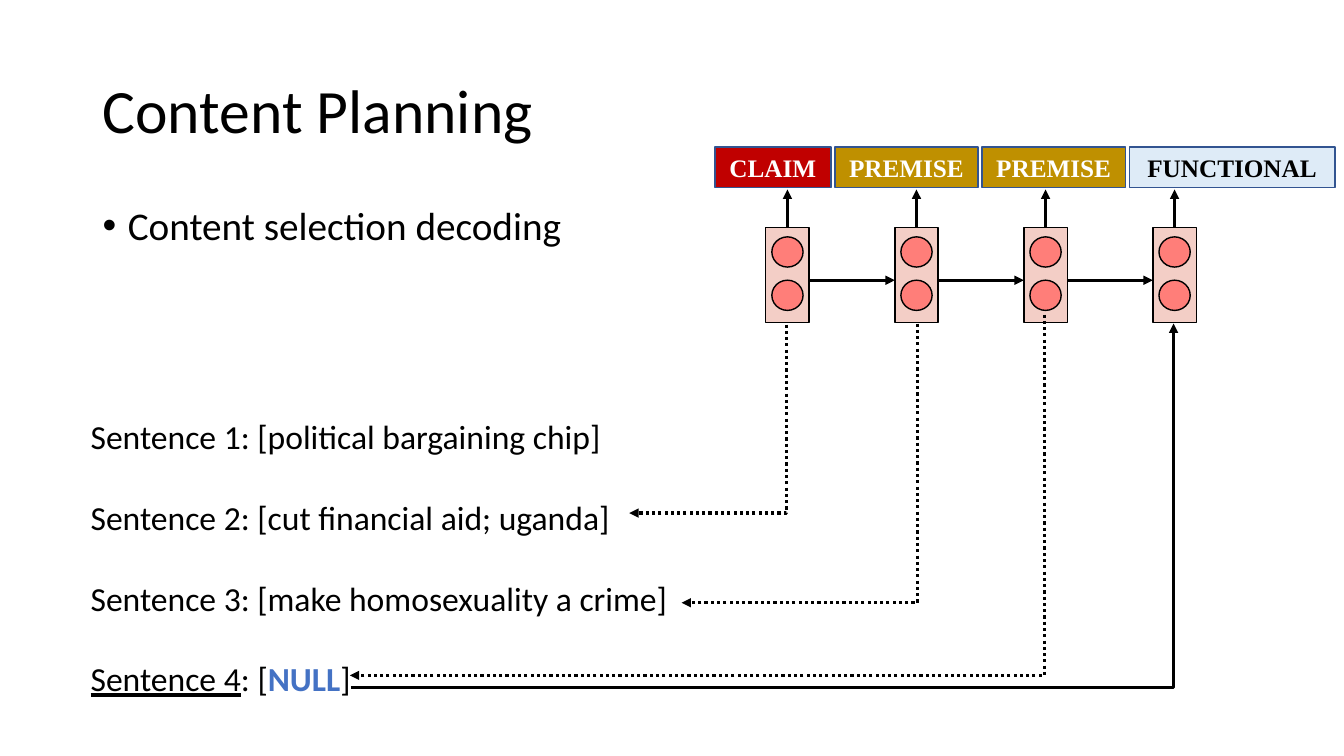
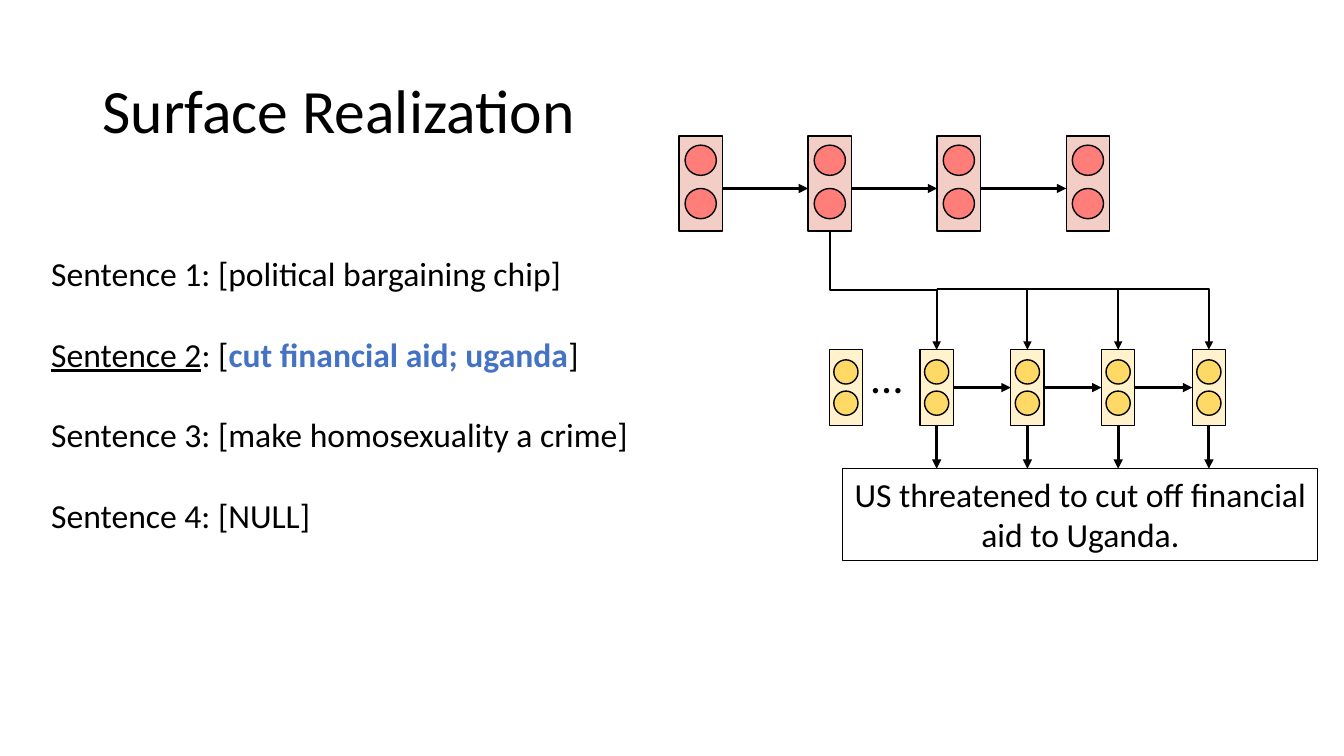
from collections import namedtuple
from itertools import pairwise

from pptx import Presentation
from pptx import util as u
from pptx.dml.color import RGBColor
from pptx.enum import dml, shapes, text
from pptx.oxml import ns, xmlchemy

SANS, SERIF = "Calibri", "Times New Roman"
BLACK, WHITE, BLUE = "000000", "FFFFFF", "4472C4"
TAG_LINE = "325491"
PITCH = 1.28
ARROW_DROP = 0.52
TOP, LEFT, BOTTOM, RIGHT = range(4)

# w, h: cell size; dot_w, dot_h: circle size; dots: circle centres below the top
CellStyle = namedtuple("CellStyle", "w h fill dot_w dot_h dot_fill dots")
PLANNER = CellStyle(0.43, 0.94, "F3CEC6", 0.31, 0.3, "FF7E79", (0.24, 0.67))
WRITER = CellStyle(0.33, 0.75, "FFF2CC", 0.24, 0.24, "FFD966", (0.22, 0.53))

SENTENCES = [
    "political bargaining chip",
    "cut financial aid; uganda",
    "make homosexuality a crime",
    "NULL",
]
TAGS = [
    ("CLAIM", 1.15, "C00000", WHITE),
    ("PREMISE", 1.42, "BF9000", WHITE),
    ("PREMISE", 1.42, "BF9000", WHITE),
    ("FUNCTIONAL", 2.04, "DEEBF7", BLACK),
]


def rgb(color):
    return RGBColor.from_string(color)


def inches(*values):
    return [u.Inches(v) for v in values]


def add_run(p, content, size, color=BLACK, font=SANS, bold=False, underline=False):
    r = p.add_run()
    r.text = content
    f = r.font
    f.size, f.name, f.bold, f.underline = u.Pt(size), font, bold, underline
    f.color.rgb = rgb(color)


def add_text_box(slide, *box):
    sp = slide.shapes.add_textbox(*inches(*box))
    sp.text_frame.word_wrap = True
    return sp


def add_title(slide, content):
    tf = add_text_box(slide, 0.92, 0.4, 11.5, 1.45).text_frame
    tf.vertical_anchor = text.MSO_ANCHOR.MIDDLE
    p = tf.paragraphs[0]
    p.line_spacing = 0.9
    add_run(p, content, 44)


def add_bullet(slide, content):
    p = add_text_box(slide, 0.92, 2, 5.5, 0.7).text_frame.paragraphs[0]
    p.line_spacing, p.space_before = 0.9, u.Pt(10)
    pPr = p._p.get_or_add_pPr()
    pPr.set("marL", str(u.Inches(0.25)))
    pPr.set("indent", str(u.Inches(-0.25)))
    for tag, key, value in (("a:buFont", "typeface", "Arial"), ("a:buChar", "char", "•")):
        bullet = xmlchemy.OxmlElement(tag)
        bullet.set(key, value)
        pPr.append(bullet)
    add_run(p, content, 28)


def add_sentences(slide, left, top, selected):
    """List the sentences, with the label and content of one emphasised."""
    tf = add_text_box(slide, left, top, 6.25, 2.93).text_frame
    for number, content in enumerate(SENTENCES, 1):
        p = tf.paragraphs[0] if number == 1 else tf.add_paragraph()
        if number > 1:
            p.space_before = u.Pt(28.8)
        chosen = number == selected
        add_run(p, f"Sentence {number}", 24, underline=chosen)
        add_run(p, ": [", 24)
        add_run(p, content, 24, BLUE if chosen else BLACK, bold=chosen)
        add_run(p, "]", 24)


def add_shape(slide, kind, box, fill, line=BLACK):
    sp = slide.shapes.add_shape(kind, *inches(*box))
    sp.shadow.inherit = False
    sp.fill.solid()
    sp.fill.fore_color.rgb = rgb(fill)
    sp.line.color.rgb = rgb(line)
    sp.line.width = u.Pt(1)
    return sp


def add_cell(slide, style, center, top):
    """Draw a network cell holding two circles and return its frame."""
    frame = add_shape(slide, shapes.MSO_SHAPE.FLOWCHART_PROCESS,
                      (center - style.w / 2, top, style.w, style.h), style.fill)
    for dot in style.dots:
        box = (center - style.dot_w / 2, top + dot - style.dot_h / 2,
               style.dot_w, style.dot_h)
        add_shape(slide, shapes.MSO_SHAPE.OVAL, box, style.dot_fill)
    return frame


def finish_line(c, width, dotted=False):
    c.line.color.rgb = rgb(BLACK)
    c.line.width = u.Pt(width)
    if dotted:
        c.line.dash_style = dml.MSO_LINE.ROUND_DOT
    tail = xmlchemy.OxmlElement("a:tailEnd")
    tail.set("type", "triangle")
    c.line._get_or_add_ln().append(tail)
    c._element.spPr.append(xmlchemy.OxmlElement("a:effectLst"))


def add_arrow(slide, start, end, begin=None, finish=None):
    """Draw a straight arrow; begin and finish are (shape, side) pairs to join."""
    c = slide.shapes.add_connector(shapes.MSO_CONNECTOR.STRAIGHT, *inches(*start, *end))
    if begin:
        c.begin_connect(*begin)
    if finish:
        c.end_connect(*finish)
    finish_line(c, 2.25)


def add_elbow(slide, start, end, width=2.25, down_first=False, bends=1, dotted=False):
    """Draw a bent arrow that leaves sideways, or downwards if down_first."""
    (x1, y1), (x2, y2) = start, end
    if down_first:
        # A quarter turn about the centre makes the first leg vertical.
        cx, cy = (x1 + x2) / 2, (y1 + y2) / 2
        half_w, half_h = (y2 - y1) / 2, (x2 - x1) / 2
        x1, x2 = cx - half_w, cx + half_w
        y1, y2 = cy + abs(half_h), cy - abs(half_h)
        if half_h < 0:
            y1, y2 = y2, y1
    c = slide.shapes.add_connector(shapes.MSO_CONNECTOR.ELBOW, *inches(x1, y1, x2, y2))
    spPr = c._element.spPr
    spPr.find(ns.qn("a:prstGeom")).set("prst", f"bentConnector{bends + 1}")
    if down_first:
        spPr.find(ns.qn("a:xfrm")).set("rot", "5400000")
    finish_line(c, width, dotted)


def add_planner(slide, first, top):
    """Draw the row of four planner cells; return their centres and frames."""
    centers = [first + PITCH * i for i in range(4)]
    cells = [add_cell(slide, PLANNER, x, top) for x in centers]
    y = top + ARROW_DROP
    for a, b in pairwise(centers):
        add_arrow(slide, (a + PLANNER.w / 2, y), (b - PLANNER.w / 2, y))
    return centers, cells


def add_tags(slide, left, top, gap):
    for label, width, fill, color in TAGS:
        sp = add_shape(slide, shapes.MSO_SHAPE.FLOWCHART_PROCESS,
                       (left, top, width, 0.4), fill, TAG_LINE)
        tf = sp.text_frame
        tf.word_wrap = False
        tf.vertical_anchor = text.MSO_ANCHOR.MIDDLE
        p = tf.paragraphs[0]
        p.alignment = text.PP_ALIGN.CENTER
        add_run(p, label, 18, color, SERIF, bold=True)
        left += width + gap


def add_centered_text(slide, box, content, size):
    sp = add_text_box(slide, *box)
    p = sp.text_frame.paragraphs[0]
    p.alignment = text.PP_ALIGN.CENTER
    add_run(p, content, size)
    return sp


def content_planning(slide):
    add_title(slide, "Content Planning")
    add_bullet(slide, "Content selection decoding")
    add_sentences(slide, 0.8, 4.08, selected=4)
    top = 2.26
    centers, cells = add_planner(slide, 7.81, top)
    for x, cell in zip(centers, cells):
        add_arrow(slide, (x, top), (x, 1.88), begin=(cell, TOP))
    add_tags(slide, 7.09, 1.46, 0.04)

    add_elbow(slide, (3.48, 6.82), (11.64, 3.21))
    selections = [((7.8, 3.22), (6.24, 5.09)),
                  ((9.1, 3.21), (6.76, 5.98)),
                  ((10.36, 3.12), (3.47, 6.7))]
    for start, end in selections:
        add_elbow(slide, start, end, down_first=True, dotted=True)


def surface_realization(slide):
    add_title(slide, "Surface Realization")
    add_sentences(slide, 0.41, 2.46, selected=2)
    centers, _ = add_planner(slide, 6.95, 1.35)

    top, bus, box_top = 3.47, 2.87, 4.65
    words = [8.39 + 0.9 * i for i in range(5)]
    writers = [add_cell(slide, WRITER, x, top) for x in words]
    add_centered_text(slide, (8.32, 3.41, 0.95, 0.64), "…", 32)

    middle, bottom = top + WRITER.h / 2, top + WRITER.h
    outputs = list(zip(words, writers))[1:]
    for (x1, a), (x2, b) in pairwise(outputs):
        add_arrow(slide, (x1, middle), (x2, middle), (a, RIGHT), (b, LEFT))
    for x, cell in outputs:
        add_arrow(slide, (x, bottom), (x, box_top), begin=(cell, BOTTOM))

    sp = add_centered_text(slide, (8.36, box_top, 4.71, 0.91),
                           "US threatened to cut off financial aid to Uganda.", 24)
    sp.line.color.rgb = rgb(BLACK)
    sp.line.width = u.Pt(0.75)

    first, *others = words[1:]
    add_elbow(slide, (centers[1], 2.28), (first, top), 1.5, down_first=True, bends=2)
    for x in others:
        add_elbow(slide, (first, bus), (x, top), 1.5)


def main():
    prs = Presentation()
    prs.slide_width, prs.slide_height = inches(13.33, 7.5)
    for build in (content_planning, surface_realization):
        build(prs.slides.add_slide(prs.slide_layouts[6]))
    prs.save("out.pptx")


if __name__ == "__main__":
    main()
